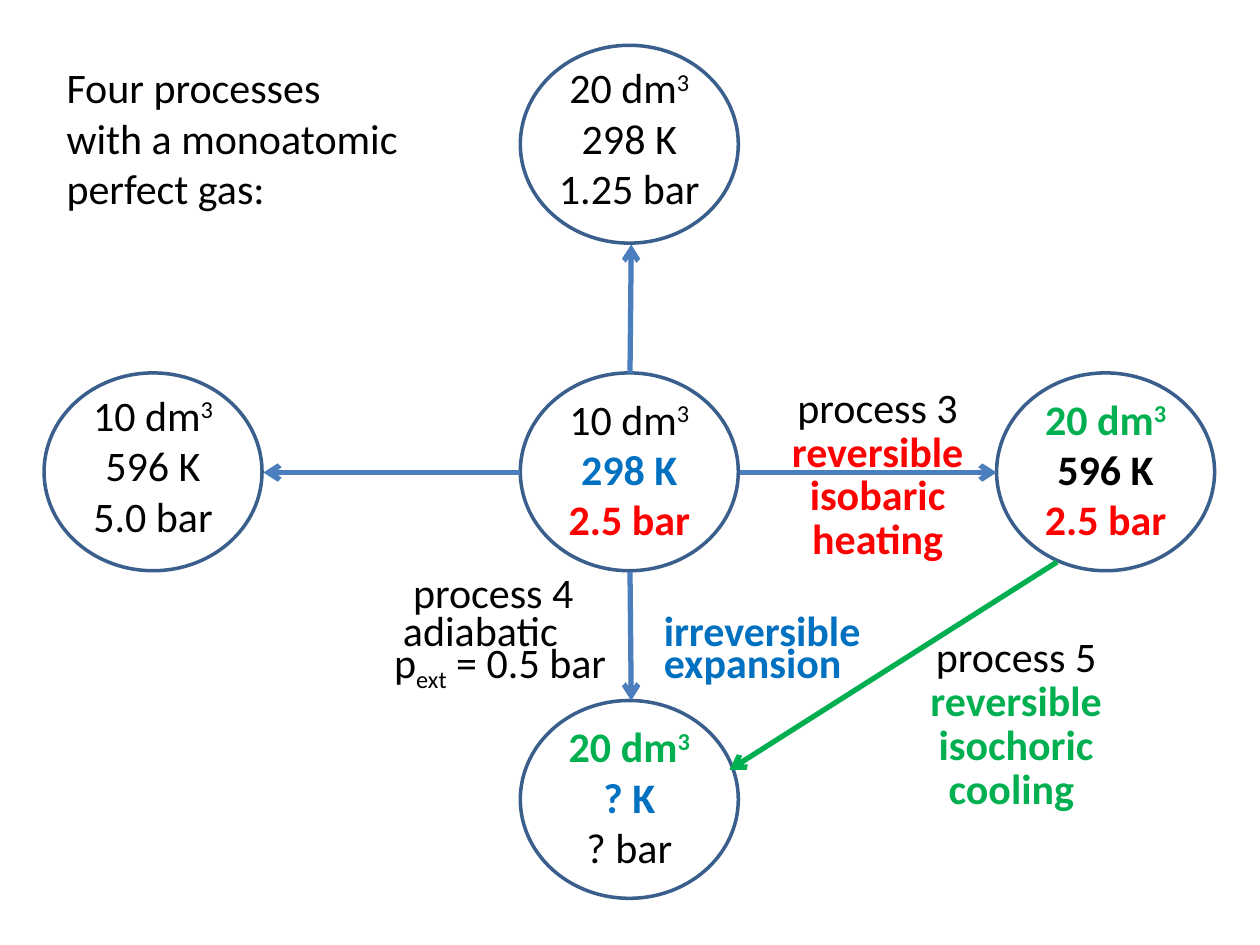
from dataclasses import dataclass

from lxml.etree import SubElement
from pptx import Presentation
from pptx.dml.color import RGBColor
from pptx.enum.shapes import MSO_CONNECTOR, MSO_SHAPE
from pptx.enum.text import MSO_AUTO_SIZE, PP_ALIGN
from pptx.oxml.ns import qn
from pptx.util import Inches, Pt

BLACK, RED, BLUE, GREEN = "000000", "FF0000", "0070C0", "00B050"
OUTLINE, ARROW = "3A5F8C", "4B7EBC"
CIRCLE_WIDTH, CIRCLE_HEIGHT = 1.73, 1.57


def color(value):
    return RGBColor.from_string(value)


@dataclass
class Part:
    text: str
    color: str = BLACK
    bold: bool = False
    baseline: int = 0


def volume(amount, shade=BLACK, bold=False):
    return [Part(f"{amount} dm", shade, bold), Part("3", shade, bold, 30)]


class SlideBuilder:
    def __init__(self, slide, font="Calibri", size=24):
        self.slide = slide
        self.font = font
        self.size = size

    def group(self):
        return self.slide.shapes.add_group_shape().shapes

    def text(self, left, top, width, height, lines, align=PP_ALIGN.CENTER,
             spacing=None, tabs=None, shapes=None):
        shapes = self.slide.shapes if shapes is None else shapes
        box = shapes.add_textbox(*map(Inches, (left, top, width, height)))
        frame = box.text_frame
        frame.word_wrap = True
        frame.auto_size = MSO_AUTO_SIZE.SHAPE_TO_FIT_TEXT
        for index, parts in enumerate(lines):
            para = frame.paragraphs[0] if index == 0 else frame.add_paragraph()
            para.alignment = align
            if spacing:
                para.line_spacing = Pt(spacing)
            if tabs:
                self.tab_stops(para, tabs[index])
            for part in parts:
                if part.text == "\n":
                    para.add_line_break()
                else:
                    self.span(para, part)

    def span(self, para, part):
        span = para.add_run()
        span.text = part.text
        span.font.name = self.font
        span.font.size = Pt(self.size)
        span.font.bold = part.bold
        span.font.color.rgb = color(part.color)
        if part.baseline:
            span.font._element.set("baseline", str(part.baseline * 1000))

    def tab_stops(self, para, positions):
        tab_list = SubElement(para._p.get_or_add_pPr(), qn("a:tabLst"))
        for position in positions:
            SubElement(tab_list, qn("a:tab"), pos=str(Inches(position)), algn="l")

    def state(self, left, top, lines, text_offset=0.11):
        shapes = self.group()
        circle = shapes.add_shape(MSO_SHAPE.OVAL, Inches(left), Inches(top),
                                  Inches(CIRCLE_WIDTH), Inches(CIRCLE_HEIGHT))
        circle.shadow.inherit = False
        circle.fill.background()
        circle.line.color.rgb = color(OUTLINE)
        circle.line.width = Pt(2)
        self.text(left + 0.08, top + text_offset, 1.57, 1.31, lines, shapes=shapes)

    def arrow(self, start, end, shade=ARROW, shapes=None):
        shapes = self.slide.shapes if shapes is None else shapes
        arrow = shapes.add_connector(MSO_CONNECTOR.STRAIGHT,
                                     *map(Inches, (*start, *end)))
        arrow.line.color.rgb = color(shade)
        arrow.line.width = Pt(3)
        SubElement(arrow.line._get_or_add_ln(), qn("a:tailEnd"), type="arrow")
        SubElement(arrow._element.spPr, qn("a:effectLst"))


def main():
    deck = Presentation()
    deck.slide_width, deck.slide_height = Inches(10), Inches(7.5)
    page = SlideBuilder(deck.slides.add_slide(deck.slide_layouts[6]))

    left, center, right = (0.35 + 3.78 * column for column in range(3))
    top, middle, bottom = (0.36 + 2.6 * row for row in range(3))
    hot = [Part("2.5 bar", RED, True)]

    page.state(center, middle, [volume(10), [Part("298 K", BLUE, True)], hot])
    page.state(right, middle, [volume(20, GREEN, True),
                               [Part("596 K", bold=True)], hot])
    page.arrow((5.87, 3.75), (7.91, 3.75))
    page.state(center, top, [volume(20), [Part("298 K")], [Part("1.25 bar")]], 0.08)
    page.arrow((5, 2.96), (5.01, 1.94))
    page.state(left, middle, [volume(10), [Part("596 K")], [Part("5.0 bar")]], 0.08)
    page.state(center, bottom, [volume(20, GREEN, True),
                                [Part("? K", BLUE, True)], [Part("? bar")]])
    page.arrow((4.13, 3.75), (2.09, 3.75))
    page.arrow((5, 4.54), (5.01, 5.56))

    page.text(6.02, 3.03, 1.89, 1.5, [
        [Part("process 3")],
        [Part("reversible", RED, True)],
        [Part("isobaric heating", RED, True)],
    ], spacing=25)
    page.text(2.8, 4.54, 4.17, 1.03, [
        [Part("\tprocess 4")],
        [Part("\tadiabatic\t"), Part("irreversible", BLUE, True)],
        [Part("\tp"), Part("ext", baseline=-25), Part(" = 0.5 bar\t"),
         Part("expansion", BLUE, True)],
    ], PP_ALIGN.LEFT, spacing=22, tabs=[(0.38,), (0.3, 2.37), (0.23, 2.37)])
    page.text(0.43, 0.44, 3.07, 1.31, [
        [Part("Four processes"), Part("\n"), Part("with a monoatomic")],
        [Part("perfect gas:")],
    ], PP_ALIGN.LEFT)

    cooling = page.group()
    page.arrow((8.39, 4.46), (5.79, 6.11), GREEN, cooling)
    page.text(7.2, 5.01, 1.73, 1.5, [
        [Part("process 5")],
        *([Part(word, GREEN, True)] for word in ("reversible", "isochoric", "cooling ")),
    ], spacing=25, shapes=cooling)

    deck.save("out.pptx")


if __name__ == "__main__":
    main()
